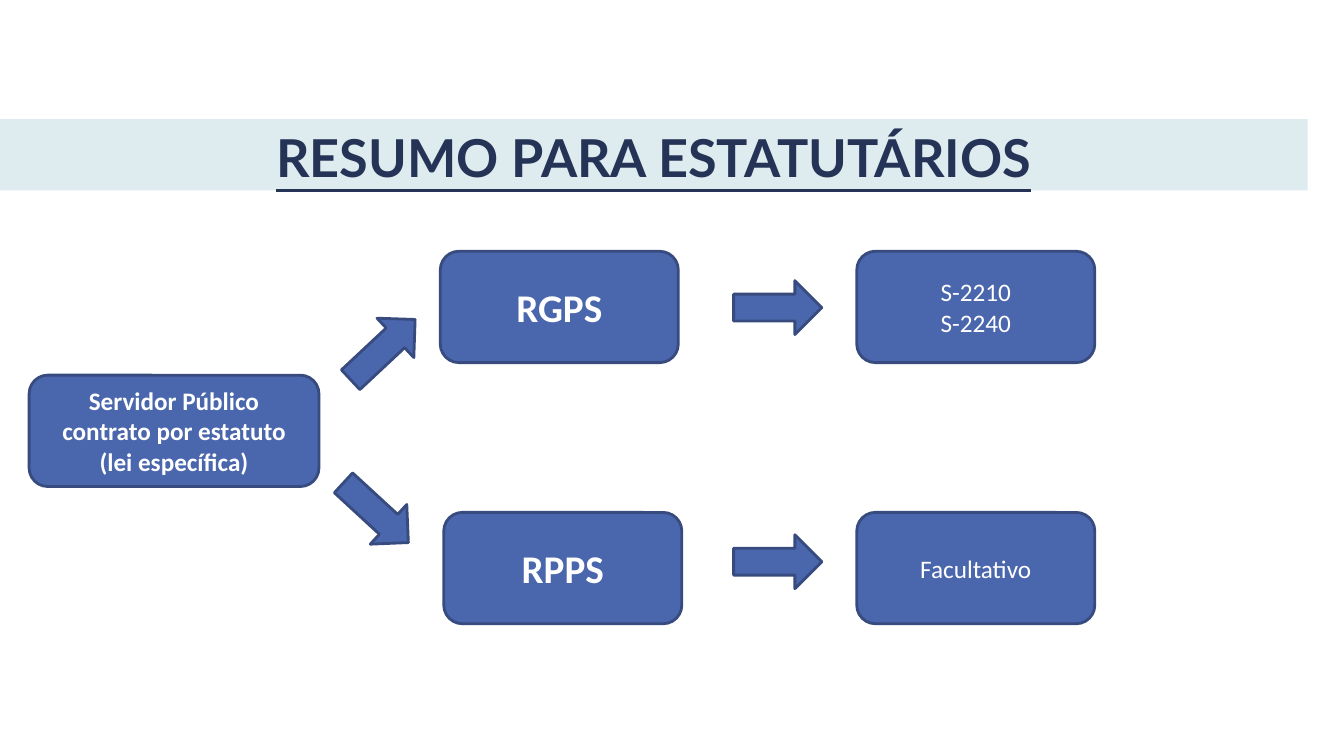
from pptx import Presentation
from pptx.dml.color import RGBColor
from pptx.enum.shapes import MSO_SHAPE
from pptx.enum.text import MSO_ANCHOR, PP_ALIGN
from pptx.util import Pt

BOX, ARROW = MSO_SHAPE.ROUNDED_RECTANGLE, MSO_SHAPE.RIGHT_ARROW
TOP, MIDDLE = MSO_ANCHOR.TOP, MSO_ANCHOR.MIDDLE
CENTER = PP_ALIGN.CENTER
COLORS = {"band": "DEECEF", "title": "253356", "fill": "4A66AC",
          "line": "374B7F", "text": "FFFFFF"}


def color(name):
    return RGBColor.from_string(COLORS[name])


def add_block(kind, left, top, width, height):
    """Add a filled and outlined shape without shadow."""
    block = slide.shapes.add_shape(kind, Pt(left), Pt(top), Pt(width), Pt(height))
    block.shadow.inherit = False
    block.fill.solid()
    block.fill.fore_color.rgb = color("fill")
    block.line.color.rgb = color("line")
    block.line.width = Pt(2)
    return block


prs = Presentation()
prs.slide_width, prs.slide_height = Pt(960), Pt(540)
slide = prs.slides.add_slide(prs.slide_layouts[5])

# Title band
title = slide.shapes.title
title.left, title.top, title.width, title.height = Pt(0), Pt(85), Pt(934), Pt(51)
title.fill.solid()
title.fill.fore_color.rgb = color("band")
frame = title.text_frame
frame.word_wrap = True
frame.vertical_anchor = TOP
para = frame.paragraphs[0]
para.alignment = CENTER
para.line_spacing = Pt(45.3)
run = para.add_run()
run.text = "RESUMO PARA ESTATUTÁRIOS"
run.font.name = "Lato"
run.font.size = Pt(37.3)
run.font.bold = True
run.font.underline = True
run.font.color.rgb = color("title")

# Boxes: left, top, width, text size, bold, lines
HIGH, LOW = 179.5, 366
boxes = [
    (20.8, 268, 207, 18, True, ["Servidor Público contrato por estatuto (lei específica)"]),
    (314.5, HIGH, 170, 28, True, ["RGPS"]),
    (317, LOW, 170, 28, True, ["RPPS"]),
    (612, HIGH, 170, 18, False, ["S-2210", "S-2240"]),
    (612, LOW, 170, 18, False, ["Facultativo"]),
]
for left, top, width, size, bold, lines in boxes:
    frame = add_block(BOX, left, top, width, 79.5).text_frame
    frame.word_wrap = True
    frame.vertical_anchor = MIDDLE
    for i, line in enumerate(lines):
        para = frame.add_paragraph() if i else frame.paragraphs[0]
        para.alignment = CENTER
        run = para.add_run()
        run.text = line
        run.font.name = "Calibri"
        run.font.size = Pt(size)
        run.font.bold = bold
        run.font.color.rgb = color("text")

# Arrows: left, top, turn in degrees
arrows = [(242, 230.5, 316.9), (237, 347, 42.6), (524, 200.5, 0), (524, 382, 0)]
for left, top, turn in arrows:
    add_block(ARROW, left, top, 63, 38.5).rotation = turn

prs.save("out.pptx")
